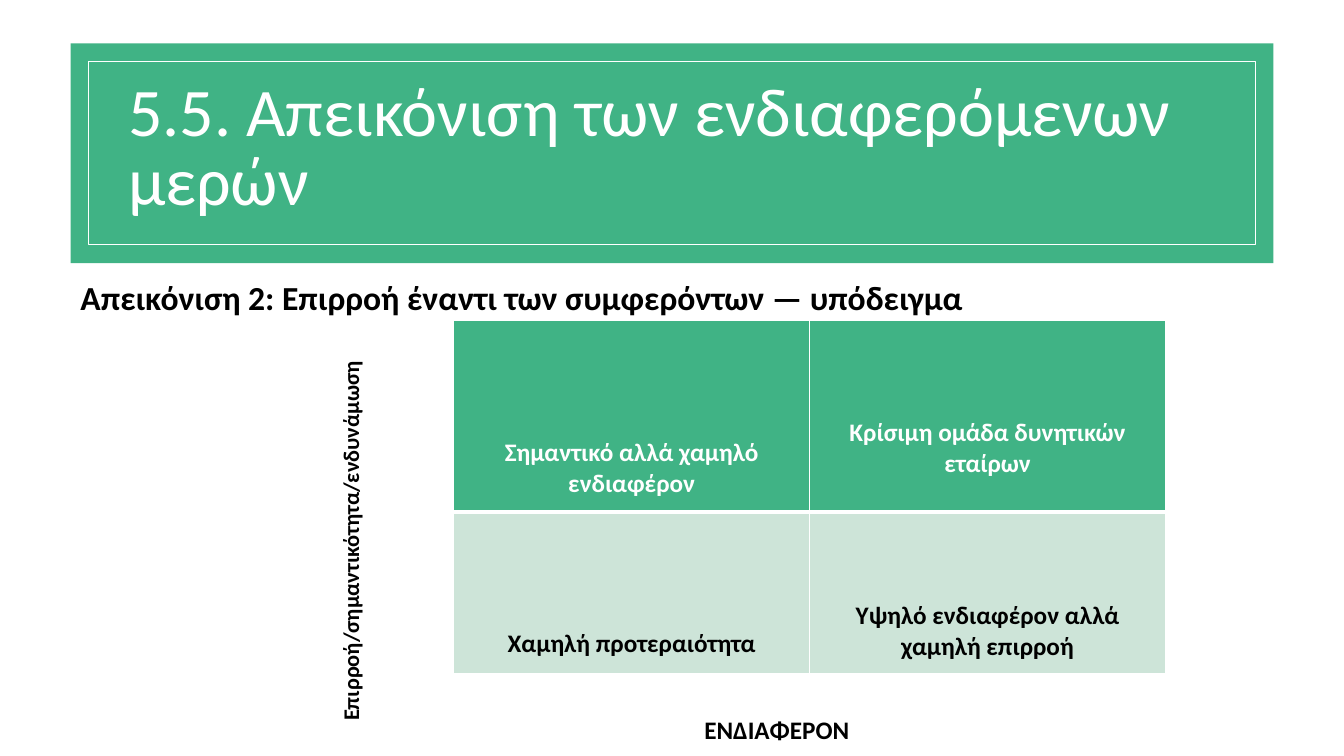
from lxml.etree import SubElement
from pptx import Presentation
from pptx.dml.color import RGBColor
from pptx.enum.shapes import MSO_SHAPE as Shape
from pptx.enum.text import MSO_ANCHOR as Anchor, MSO_AUTO_SIZE as Fit, PP_ALIGN as Align
from pptx.oxml.ns import qn
from pptx.util import Pt

PX = 9144
GREEN = RGBColor(0x40, 0xB3, 0x85)
PALE = RGBColor(0xCD, 0xE4, 0xD8)
WHITE = RGBColor(0xFF, 0xFF, 0xFF)
BLACK = RGBColor(0x00, 0x00, 0x00)
FONT = "Calibri"

CELLS = [
    [("Σημαντικό αλλά χαμηλό ενδιαφέρον", 116), ("Κρίσιμη ομάδα δυνητικών εταίρων", 96)],
    [("Χαμηλή προτεραιότητα", 116), ("Υψηλό ενδιαφέρον αλλά χαμηλή επιρροή", 88)],
]
ROWS = [(190, GREEN, WHITE, 1, 3), (160, PALE, BLACK, 3, 1)]


def px(*sizes):
    return [size * PX for size in sizes]


def write(frame, text, size, color, bold=True, align=Align.LEFT):
    frame.text = text
    frame.word_wrap = True
    para = frame.paragraphs[0]
    para.alignment = align
    font = para.runs[0].font
    font.name, font.size, font.bold = FONT, Pt(size), bold
    font.color.rgb = color
    return para


def label(slide, box, text, size, align=Align.LEFT, turn=0):
    shape = slide.shapes.add_textbox(*px(*box))
    shape.rotation = turn
    write(shape.text_frame, text, size, BLACK, align=align)


def banner(slide, box, text):
    x, y, w, h = box
    inset = 18
    back = slide.shapes.add_shape(Shape.RECTANGLE, *px(x, y, w, h))
    rim = slide.shapes.add_shape(
        Shape.RECTANGLE, *px(x + inset, y + inset, w - 2 * inset, h - 2 * inset))
    back.shadow.inherit = rim.shadow.inherit = False
    back.fill.solid()
    back.fill.fore_color.rgb = GREEN
    back.line.fill.background()
    rim.fill.background()
    rim.line.color.rgb = WHITE
    rim.line.width = Pt(0.75)

    title = slide.shapes.title
    title.left, title.top, title.width, title.height = px(x + 47, y + 39, w - 95, 134)
    para = write(title.text_frame, text, 48.6, WHITE, bold=False)
    para.line_spacing = 0.85
    title.text_frame.vertical_anchor = Anchor.MIDDLE
    title.text_frame.auto_size = Fit.NONE
    tree = slide.shapes._spTree
    tree.remove(title._element)
    tree.append(title._element)


def edge(cell, side, width):
    line = SubElement(cell._tc.get_or_add_tcPr(), qn("a:" + side), w=str(Pt(width)))
    fill = SubElement(line, qn("a:solidFill"))
    SubElement(fill, qn("a:srgbClr"), val=str(WHITE))


def matrix(slide, box):
    table = slide.shapes.add_table(2, 2, *px(*box)).table
    table.first_row = table.horz_banding = False
    for r, (height, fill, color, top, bottom) in enumerate(ROWS):
        table.rows[r].height = height * PX
        for c, (text, drop) in enumerate(CELLS[r]):
            cell = table.cell(r, c)
            for side, width in zip(("lnL", "lnR", "lnT", "lnB"), (1, 1, top, bottom)):
                edge(cell, side, width)
            cell.fill.solid()
            cell.fill.fore_color.rgb = fill
            cell.margin_top = drop * PX
            write(cell.text_frame, text, 18, color, align=Align.CENTER)


def main():
    deck = Presentation()
    deck.slide_width, deck.slide_height = px(1333, 750)
    slide = deck.slides.add_slide(deck.slide_layouts[5])
    banner(slide, (70, 43, 1193, 218), "5.5. Απεικόνιση των ενδιαφερόμενων μερών")
    label(slide, (70, 270, 1233, 50),
          "Απεικόνιση 2: Επιρροή έναντι των συμφερόντων — υπόδειγμα", 24)
    matrix(slide, (450, 318, 706, 350))
    label(slide, (153, 512, 389, 37), "Επιρροή/σημαντικότητα/ενδυνάμωση", 16, turn=270)
    label(slide, (612, 704, 317, 40), "ΕΝΔΙΑΦΕΡΟΝ", 18, Align.CENTER)
    deck.save("out.pptx")


if __name__ == "__main__":
    main()
